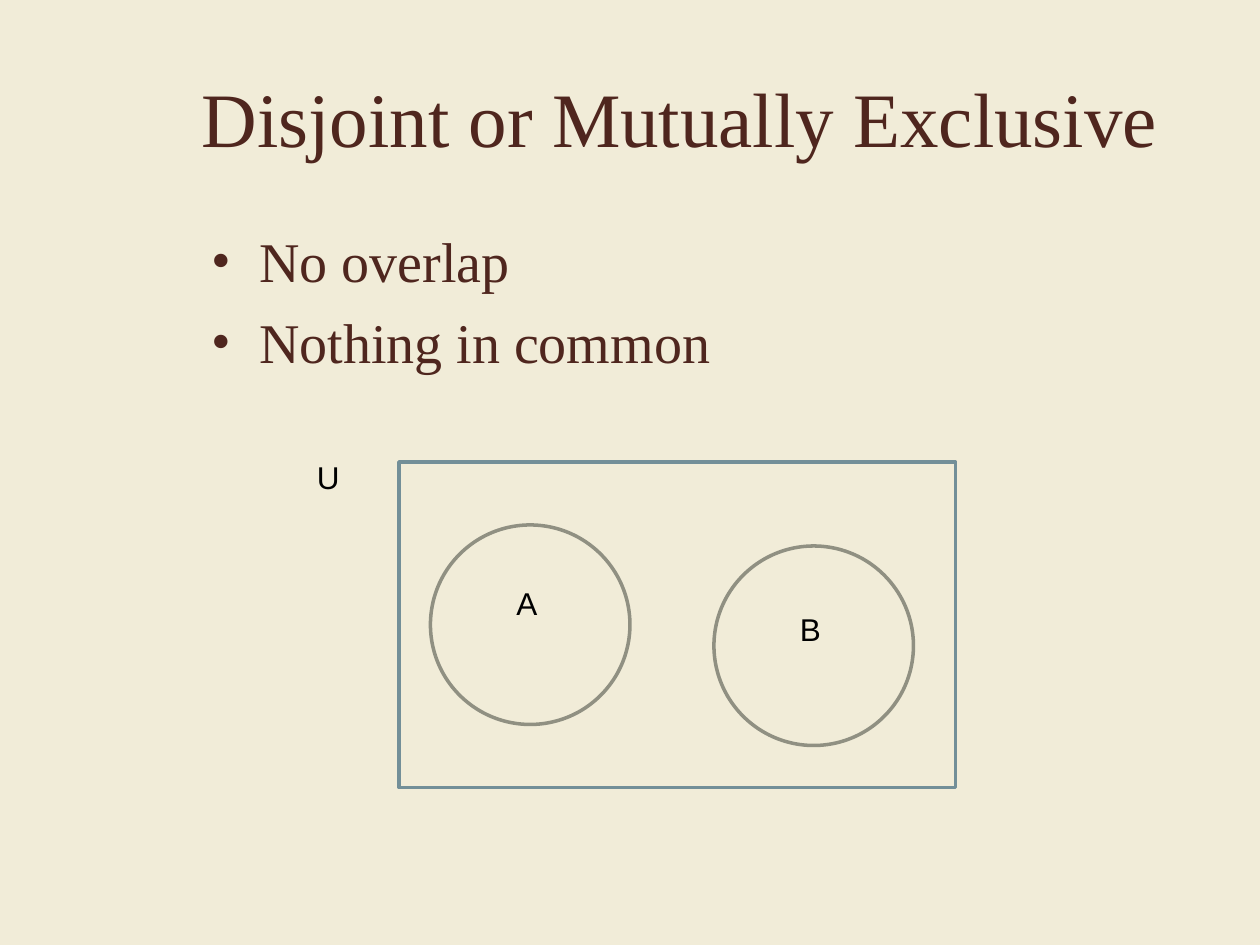
from pptx import Presentation
from pptx.util import Pt
from pptx.dml.color import RGBColor
from pptx.enum.shapes import MSO_SHAPE
from pptx.enum.text import MSO_ANCHOR, PP_ALIGN
from lxml.etree import SubElement
from pptx.oxml.ns import qn

TITLE = "Disjoint or Mutually Exclusive"
POINTS = ["No overlap", "Nothing in common"]
HUES = {"back": "F1ECD8", "text": "4F261E", "frame": "738F98",
        "ring": "909082", "label": "000000"}
SHAPES = [
    (MSO_SHAPE.RECTANGLE, (228, 264, 318, 186), "frame"),
    (MSO_SHAPE.OVAL, (246, 300, 114, 114), "ring"),
    (MSO_SHAPE.OVAL, (408, 312, 114, 114), "ring"),
]
LABELS = [
    ("U", (174, 258, 42, 29)),
    ("A", (288, 330, 42, 29)),
    ("B", (450, 345, 36, 29)),
]


def hue(name):
    return RGBColor.from_string(HUES[name])


def style(para, size, face, color):
    para.alignment = PP_ALIGN.LEFT
    for run in para.runs:
        run.font.size = Pt(size)
        run.font.name = face
        run.font.color.rgb = hue(color)


def add_box(slide, spot):
    box = slide.shapes.add_textbox(*map(Pt, spot))
    box.text_frame.word_wrap = True
    return box.text_frame


def add_title(slide):
    title = slide.shapes.title
    title.left, title.top, title.width, title.height = map(Pt, (108, 21.6, 576, 90))
    frame = title.text_frame
    frame.text = TITLE
    frame.vertical_anchor = MSO_ANCHOR.MIDDLE
    style(frame.paragraphs[0], 44, "Times New Roman", "text")


def add_points(slide):
    frame = add_box(slide, (114, 126, 570, 356))
    frame.text = "\n".join(POINTS)
    for i, para in enumerate(frame.paragraphs):
        props = para._p.get_or_add_pPr()
        props.set("marL", str(Pt(27)))
        props.set("indent", str(Pt(-27)))
        SubElement(props, qn("a:buFont")).set("typeface", "Times New Roman")
        SubElement(props, qn("a:buChar")).set("char", "•")
        if i:
            para.space_before = Pt(8)
        style(para, 32, "Times New Roman", "text")


def add_venn(slide):
    for kind, spot, color in SHAPES:
        shape = slide.shapes.add_shape(kind, *map(Pt, spot))
        shape.shadow.inherit = False
        shape.fill.solid()
        shape.fill.fore_color.rgb = hue("back")
        shape.line.color.rgb = hue(color)
        shape.line.width = Pt(2)
    for text, spot in LABELS:
        frame = add_box(slide, spot)
        frame.text = text
        style(frame.paragraphs[0], 18, "Arial", "label")


def main():
    deck = Presentation()
    deck.slide_width, deck.slide_height = Pt(720), Pt(540)
    slide = deck.slides.add_slide(deck.slide_layouts[5])
    slide.background.fill.solid()
    slide.background.fill.fore_color.rgb = hue("back")
    add_title(slide)
    add_points(slide)
    add_venn(slide)
    deck.save("out.pptx")


if __name__ == "__main__":
    main()
